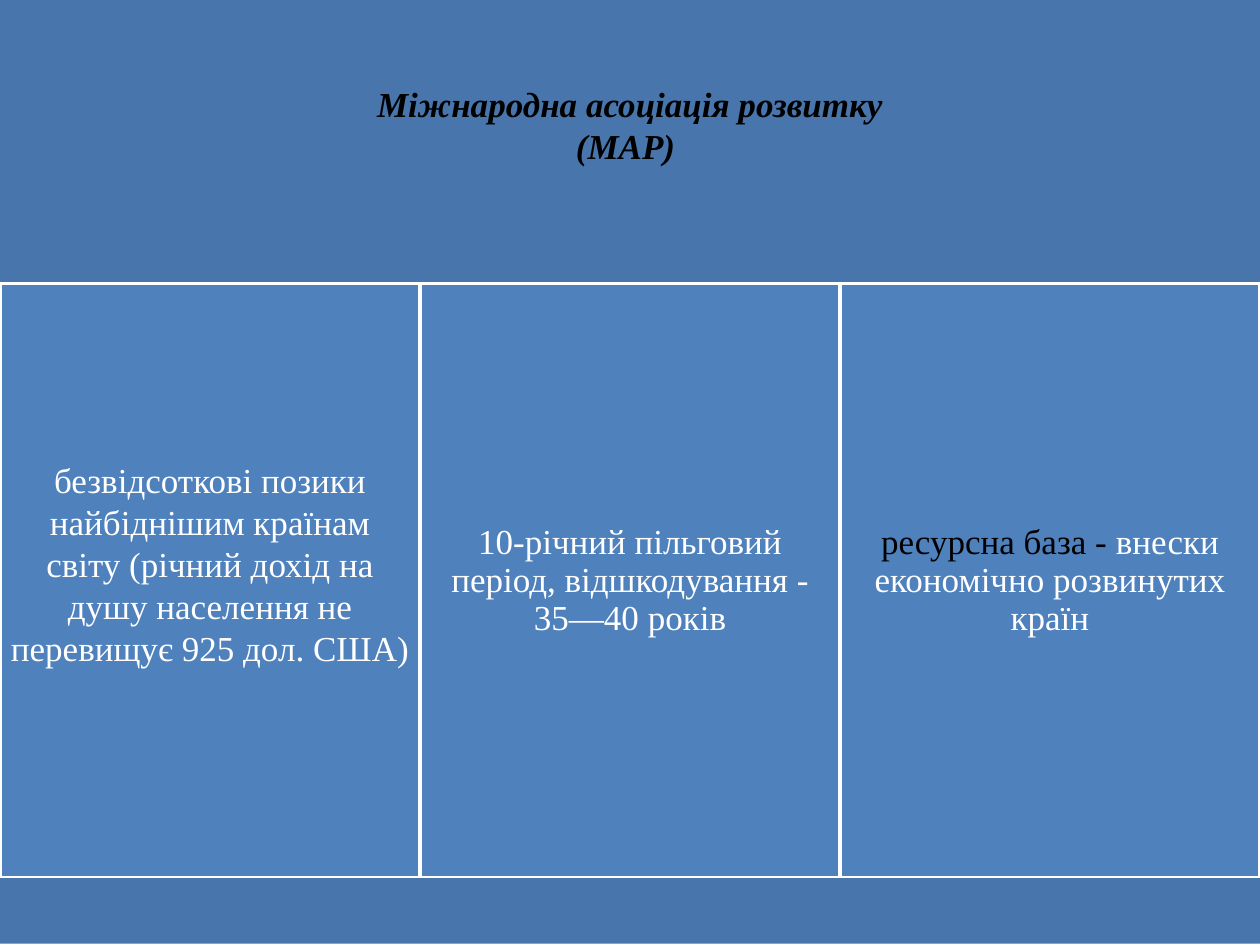
from pptx import Presentation
from pptx.dml.color import RGBColor
from pptx.enum.shapes import MSO_SHAPE
from pptx.enum.text import MSO_ANCHOR, PP_ALIGN
from pptx.util import Inches, Pt

RECTANGLE = MSO_SHAPE.RECTANGLE
MIDDLE = MSO_ANCHOR.MIDDLE
CENTER = PP_ALIGN.CENTER

THEME = {
    "band": RGBColor.from_string("4875AC"),
    "column": RGBColor.from_string("4F81BD"),
    "white": RGBColor.from_string("FFFFFF"),
    "black": RGBColor.from_string("000000"),
    "font": "Times New Roman",
    "size": Pt(20),
    "border": Pt(2),
}
SLIDE_WIDTH, SLIDE_HEIGHT = 10, 7.5
HEADER_HEIGHT, COLUMN_HEIGHT, FOOTER_HEIGHT = 2.25, 4.72, 0.52
INSET, RAISED_INSET = 0.08, 0.35

presentation = Presentation()
presentation.slide_width = Inches(SLIDE_WIDTH)
presentation.slide_height = Inches(SLIDE_HEIGHT)
slide = presentation.slides.add_slide(presentation.slide_layouts[6])


def add_panel(left, top, width, height, fill):
    panel = slide.shapes.add_shape(
        RECTANGLE, Inches(left), Inches(top), Inches(width), Inches(height))
    panel.shadow.inherit = False
    panel.fill.solid()
    panel.fill.fore_color.rgb = fill
    panel.line.fill.background()
    return panel


def write_text(panel, paragraphs, bottom, spacing, emphasis):
    frame = panel.text_frame
    frame_format = {
        "word_wrap": True,
        "vertical_anchor": MIDDLE,
        "margin_left": Inches(INSET),
        "margin_right": Inches(INSET),
        "margin_top": Inches(INSET),
        "margin_bottom": Inches(bottom),
    }
    for attribute, value in frame_format.items():
        setattr(frame, attribute, value)
    font_format = {"name": THEME["font"], "size": THEME["size"],
                   "bold": emphasis, "italic": emphasis}
    for index, pieces in enumerate(paragraphs):
        paragraph = frame.paragraphs[0] if index == 0 else frame.add_paragraph()
        paragraph.alignment = CENTER
        paragraph.line_spacing = spacing
        for words, color in pieces:
            run = paragraph.add_run()
            run.text = words
            for attribute, value in font_format.items():
                setattr(run.font, attribute, value)
            run.font.color.rgb = THEME[color]


header = add_panel(0, 0, SLIDE_WIDTH, HEADER_HEIGHT, THEME["band"])
title = [[("Міжнародна асоціація розвитку", "black")], [("(МАР) ", "black")]]
write_text(header, title, RAISED_INSET, 1.0, True)

features = [
    ([("безвідсоткові позики найбіднішим країнам світу (річний дохід на душу "
       "населення не перевищує 925 дол. США)", "white")], RAISED_INSET, 1.0),
    ([("10-річний пільговий період, відшкодування - 35—40 років", "white")],
     INSET, 0.9),
    ([("ресурсна база - ", "black"),
      ("внески економічно розвинутих країн", "white")], INSET, 0.9),
]
column_width = SLIDE_WIDTH / len(features)
for position, (pieces, bottom, spacing) in enumerate(features):
    column = add_panel(position * column_width, HEADER_HEIGHT,
                       column_width, COLUMN_HEIGHT, THEME["column"])
    column.line.color.rgb = THEME["white"]
    column.line.width = THEME["border"]
    write_text(column, [pieces], bottom, spacing, False)

add_panel(0, HEADER_HEIGHT + COLUMN_HEIGHT, SLIDE_WIDTH, FOOTER_HEIGHT,
          THEME["band"])

presentation.save("out.pptx")
